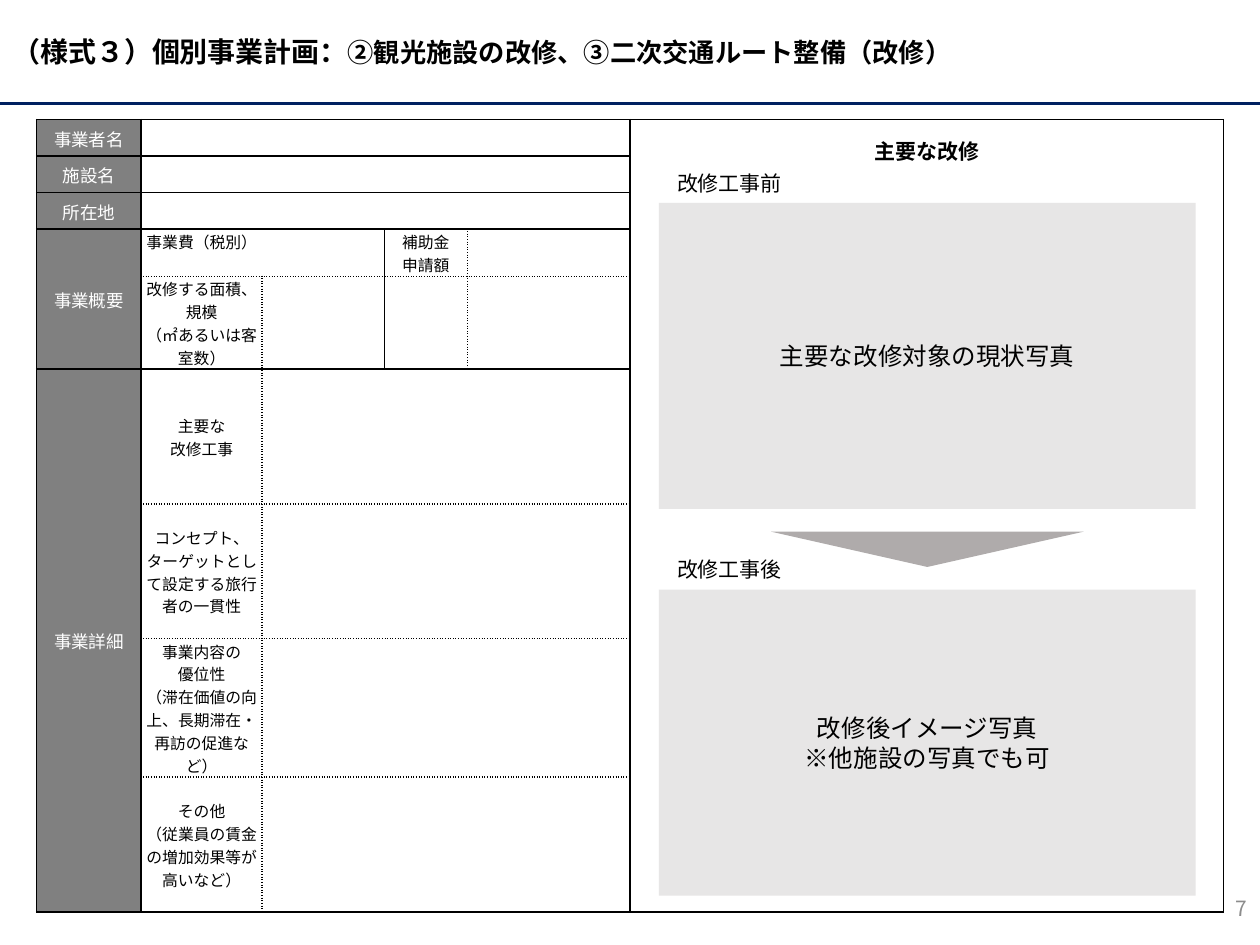
"""Build the renovation plan form slide with its table and photo frames."""
from dataclasses import dataclass

from lxml import etree
from pptx import Presentation
from pptx import util as u
from pptx.dml.color import RGBColor
from pptx.enum import shapes, text
from pptx.oxml.ns import qn

FONT = "Noto Sans CJK JP"
HUES = {"ink": "000000", "white": "FFFFFF", "navy": "002060", "head": "808080",
        "frame": "E7E6E6", "arrow": "AFABAB", "page": "8C8C8C"}
MID, TOP = text.MSO_ANCHOR.MIDDLE, text.MSO_ANCHOR.TOP
LEFT, MIDST, RIGHT = text.PP_ALIGN.LEFT, text.PP_ALIGN.CENTER, text.PP_ALIGN.RIGHT
COLS = [0.83, 0.96, 0.97, 0.66, 1.29, 4.71]
ROWS = [0.29] * 3 + [0.36, 0.7] + [1.07] * 4
SPANS = ([(r, 1, r, 4) for r in range(3)] + [(r, 2, r, 4) for r in range(5, 9)]
         + [(3, 0, 4, 0), (5, 0, 8, 0), (0, 5, 8, 5)])
DOT_V = {(r, 2) for r in range(4, 9)} | {(3, 4), (4, 4)}
DOT_H = {(r, c) for r in (4, 6, 7, 8) for c in range(1, 5)}
BARE_V = {(3, 2)}


@dataclass
class Label:
    row: int
    col: int
    words: list[str]
    pad: float = 0.01
    anchor: text.MSO_ANCHOR = MID


@dataclass
class Note:
    at: tuple[float, float, float, float]
    words: list[str]
    size: float = 12
    hue: str = "ink"
    fill: str = ""
    align: text.PP_ALIGN = MIDST
    bold: bool = False


LABELS = [
    Label(0, 0, ["事業者名"]), Label(1, 0, ["施設名"]), Label(2, 0, ["所在地"]),
    Label(3, 0, ["事業概要"]), Label(5, 0, ["事業詳細"]),
    Label(3, 1, ["事業費（税別）"], 0.04, TOP),
    Label(3, 3, ["補助金", "申請額"]),
    Label(4, 1, ["改修する面積、規模", "（㎡あるいは客室数）"], 0.04),
    Label(5, 1, ["主要な\v改修工事"]),
    Label(6, 1, ["コンセプト、ターゲットとして設定する旅行者の一貫性"]),
    Label(7, 1, ["事業内容の", "優位性", "（滞在価値の向上、長期滞在・再訪の促進など）"]),
    Label(8, 1, ["その他", "（従業員の賃金の増加効果等が高いなど）"]),
]
NOTES = [
    Note((7.75, 7.01, 2.25, 0.4), ["7"], hue="page", align=RIGHT),
    Note((5.15, 1.34, 1.28, 0.23), ["改修工事前"]),
    Note((5.15, 4.4, 1.28, 0.23), ["改修工事後"]),
    Note((5.23, 1.61, 4.26, 2.43), ["主要な改修対象の現状写真"], 14, fill="frame"),
    Note((5.23, 4.68, 4.26, 2.43), ["改修後イメージ写真", "※他施設の写真でも可"], 14, fill="frame"),
    Note((5.23, 1.12, 4.26, 0.16), ["主要な改修"], bold=True),
]


def tint(hue: str) -> RGBColor:
    """Turn a colour name into a colour."""
    return RGBColor.from_string(HUES[hue])


def box(at: tuple) -> list:
    """Turn inches into lengths."""
    return [u.Inches(n) for n in at]


def apply(item, form: dict) -> None:
    """Set each format value on an item."""
    for key, val in form.items():
        setattr(item, key, val)


def style(run, size: float, hue: str, bold: bool = False) -> None:
    """Format one run, East Asian font included."""
    apply(run.font, {"name": FONT, "size": u.Pt(size), "bold": bold})
    run.font.color.rgb = tint(hue)
    face = etree.Element(qn("a:ea"), typeface=FONT)
    run.font._element.find(qn("a:latin")).addnext(face)


def write(frame, words: list[str], size: float, hue: str,
          align: text.PP_ALIGN = MIDST, bold: bool = False) -> None:
    """Fill a text frame with one paragraph for each string."""
    frame.text = "\n".join(words)
    for para in frame.paragraphs:
        para.alignment = align
        for run in para.runs:
            style(run, size, hue, bold)
        for gap in para._p.findall(qn("a:br")):
            etree.SubElement(gap, qn("a:rPr"), sz=str(int(size * 100)))


def edge(cell, spot: int, side: str, dash: str) -> None:
    """Draw one border of a cell."""
    line = etree.Element(qn(f"a:ln{side}"), w=str(u.Pt(1)))
    if dash:
        fill = etree.SubElement(line, qn("a:solidFill"))
        etree.SubElement(fill, qn("a:srgbClr"), val=HUES["ink"])
        etree.SubElement(line, qn("a:prstDash"), val=dash)
    else:
        etree.SubElement(line, qn("a:noFill"))
    cell._tc.get_or_add_tcPr().insert(spot, line)


def dash_v(row: int, col: int) -> str:
    """Name the dash of the edge left of a column."""
    return "" if (row, col) in BARE_V else "sysDot" if (row, col) in DOT_V else "solid"


def dash_h(row: int, col: int) -> str:
    """Name the dash of the edge above a row."""
    return "sysDot" if (row, col) in DOT_H else "solid"


def add_form(slide) -> None:
    """Add the form table."""
    area = box((0.29, 0.95, sum(COLS), sum(ROWS)))
    form = slide.shapes.add_table(len(ROWS), len(COLS), *area).table
    apply(form, {"first_row": False, "horz_banding": False})
    for col, wide in zip(form.columns, COLS):
        col.width = u.Inches(wide)
    for row, tall in zip(form.rows, ROWS):
        row.height = u.Inches(tall)
    marks = {(m.row, m.col): m for m in LABELS}
    for r in range(len(ROWS)):
        for c in range(len(COLS)):
            cell, mark = form.cell(r, c), marks.get((r, c), Label(r, c, []))
            pad = u.Inches(mark.pad)
            apply(cell, {"margin_left": pad, "margin_right": pad, "margin_bottom": 0,
                         "margin_top": u.Inches(0.01), "vertical_anchor": mark.anchor})
            cell.fill.solid()
            cell.fill.fore_color.rgb = tint("white" if c else "head")
            sides = {"L": dash_v(r, c), "R": dash_v(r, c + 1),
                     "T": dash_h(r, c), "B": dash_h(r + 1, c)}
            for spot, (side, dash) in enumerate(sides.items()):
                edge(cell, spot, side, dash)
            if mark.words:
                write(cell.text_frame, mark.words, 9 if c else 10, "ink" if c else "white")
            else:
                para = cell.text_frame.paragraphs[0]._p
                etree.SubElement(para, qn("a:endParaRPr"), sz="900")
    for top, left, low, right in SPANS:
        form.cell(top, left).merge(form.cell(low, right))


def add_solid(slide, kind: shapes.MSO_SHAPE, at: tuple, hue: str):
    """Add a filled shape with no line."""
    shape = slide.shapes.add_shape(kind, *box(at))
    shape.shadow.inherit = False
    shape.fill.solid()
    shape.fill.fore_color.rgb = tint(hue)
    shape.line.fill.background()
    return shape


def add_note(slide, note: Note) -> None:
    """Add a text box or a photo frame."""
    if note.fill:
        shape = add_solid(slide, shapes.MSO_SHAPE.RECTANGLE, note.at, note.fill)
    else:
        shape = slide.shapes.add_textbox(*box(note.at))
    apply(shape.text_frame, {"word_wrap": True, "vertical_anchor": MID})
    write(shape.text_frame, note.words, note.size, note.hue, note.align, note.bold)


def add_head(slide) -> None:
    """Add the title and the rule below it."""
    title = slide.shapes.title
    apply(title, dict(zip(("left", "top", "width", "height"), box((0, 0, 10, 0.82)))))
    frame = title.text_frame
    apply(frame, {"auto_size": text.MSO_AUTO_SIZE.NONE, "vertical_anchor": MID})
    para = frame.paragraphs[0]
    para.alignment = LEFT
    for words, size in (("（様式３）個別事業計画：", 16),
                        ("②観光施設の改修、③二次交通ルート整備（改修）", 15)):
        run = para.add_run()
        run.text = words
        style(run, size, "ink", True)
    rule = slide.shapes.add_connector(shapes.MSO_CONNECTOR.STRAIGHT, *box((0, 0.82, 10, 0.82)))
    rule.line.color.rgb = tint("navy")
    rule.line.width = u.Pt(1.5)
    etree.SubElement(rule._element.spPr, qn("a:effectLst"))


def main() -> None:
    """Build and save the slide."""
    deck = Presentation()
    apply(deck, {"slide_width": u.Inches(10), "slide_height": u.Inches(7.5)})
    slide = deck.slides.add_slide(deck.slide_layouts[5])
    add_head(slide)
    add_form(slide)
    for note in NOTES:
        add_note(slide, note)
    arrow = add_solid(slide, shapes.MSO_SHAPE.ISOSCELES_TRIANGLE, (6.12, 4.22, 2.48, 0.28), "arrow")
    arrow._element.spPr.xfrm.set("flipV", "1")
    deck.save("out.pptx")


if __name__ == "__main__":
    main()
